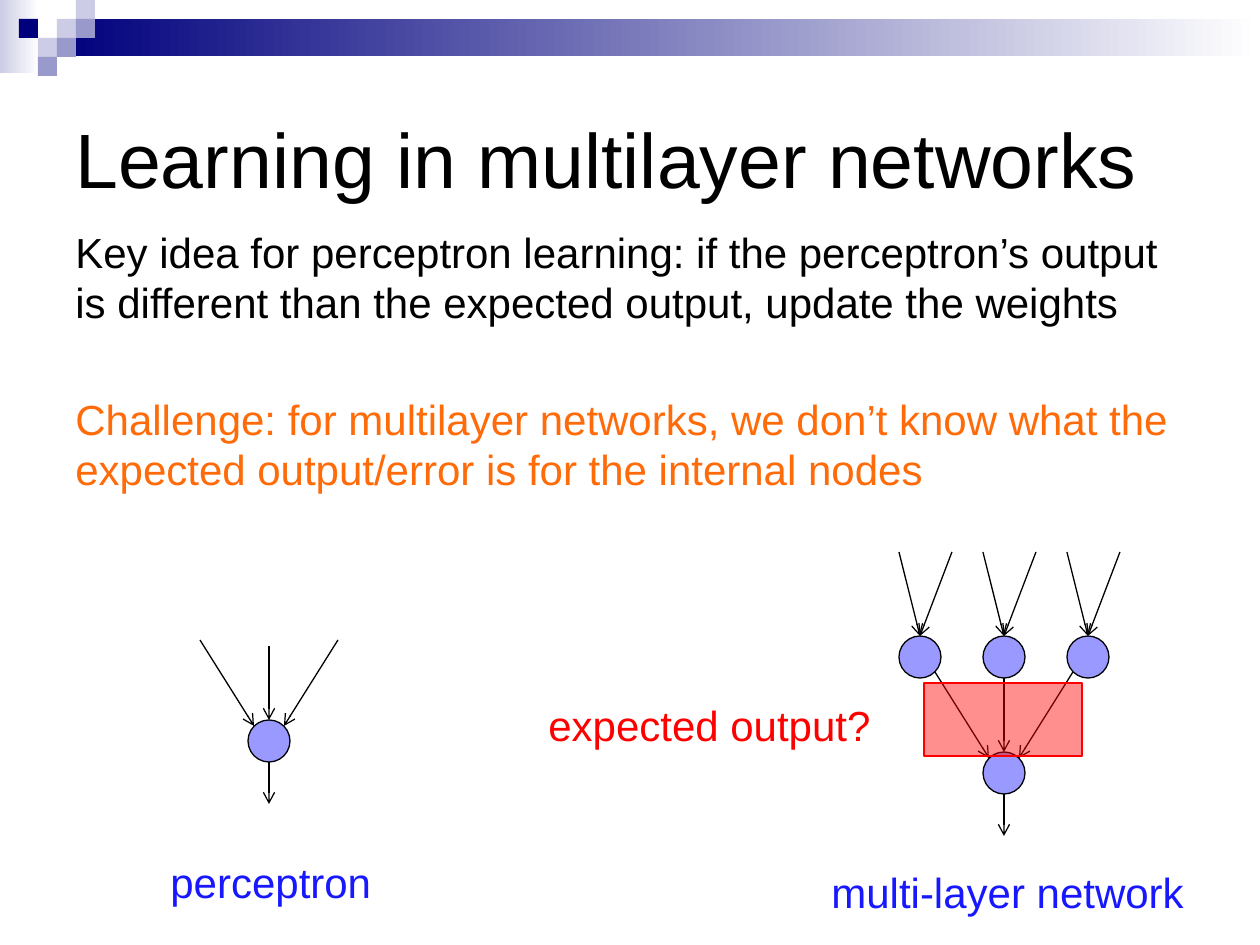
import lxml.etree
import pptx
import pptx.dml.color
import pptx.enum.shapes
import pptx.enum.text
import pptx.oxml.ns
import pptx.util

SCALE = 914400 // 126  # EMU per pixel
SHAPES = pptx.enum.shapes.MSO_SHAPE
ANCHORS = pptx.enum.text.MSO_ANCHOR

THEME = {
    "font": "Arial", "title_size": 44, "text_size": 24, "line_width": 0.75,
    "black": "000000", "white": "FFFFFF", "navy": "00007D", "pale": "CCCCE6",
    "lilac": "9999CC", "node": "9999FF", "orange": "FF6B09",
    "blue": "1818FF", "red": "FF0000",
}

# Content: box (left, top, width, height), anchor, size, paragraphs (text, color, space before)
TEXTS = [
    ((63, 63, 1134, 189), ANCHORS.MIDDLE, "title_size",
     [("Learning in multilayer networks", "black", 0)]),
    ((63, 220, 1134, 294), ANCHORS.TOP, "text_size",
     [("Key idea for perceptron learning: if the perceptron’s output is different "
       "than the expected output, update the weights", "black", 5),
      ("Challenge: for multilayer networks, we don’t know what the expected "
       "output/error is for the internal nodes", "orange", 38)]),
    ((158, 850, 284, 63), ANCHORS.TOP, "text_size", [("perceptron", "blue", 0)]),
    ((819, 860, 441, 63), ANCHORS.TOP, "text_size", [("multi-layer network", "blue", 0)]),
    ((536, 693, 378, 63), ANCHORS.TOP, "text_size", [("expected output?", "red", 0)]),
]

# Header: gradient bands, then squares as (column, row, color) on a 19 pixel grid
BANDS = [((0, 0, 39, 73), "pale"), ((57, 19, 1203, 37), "navy")]
SQUARE = 19
SQUARES = [(3, 1, "pale"), (4, 0, "pale"), (4, 1, "lilac"), (2, 2, "pale"),
           (1, 1, "navy"), (3, 2, "lilac"), (2, 3, "lilac")]

# Node centers, and arrows as (start, end) offsets from a center
NODE_SIZE = 42
HIDDEN_NODES = [(920 + 84 * index, 657) for index in range(3)]
OUTPUT_NODES = [(1004, 773), (269, 741)]
HIDDEN_ARROWS = [((-21, -105), (0, -21)), ((32, -105), (0, -21))]
OUTPUT_ARROWS = [((-69, -101), (-15, -15)), ((0, -95), (0, -21)),
                 ((69, -101), (15, -15)), ((0, 21), (0, 63))]
UNKNOWN_AREA = (924, 683, 158, 73)
UNKNOWN_ALPHA = 44


def emu(*pixels):
    return [pptx.util.Emu(value * SCALE) for value in pixels]


def color(name):
    return pptx.dml.color.RGBColor.from_string(THEME[name])


def add_filled(kind, box, fill, line=None):
    shape = slide.shapes.add_shape(kind, *emu(*box))
    shape.shadow.inherit = False
    shape.fill.solid()
    shape.fill.fore_color.rgb = color(fill)
    if line:
        shape.line.color.rgb = color(line)
        shape.line.width = pptx.util.Pt(THEME["line_width"])
    else:
        shape.line.fill.background()
    return shape


def add_band(box, start):
    fill = add_filled(SHAPES.RECTANGLE, box, start).fill
    fill.gradient()
    fill.gradient_angle = 0
    for stop, name in zip(fill.gradient_stops, (start, "white")):
        stop.color.rgb = color(name)


def add_text(box, anchor, size, paragraphs):
    frame = slide.shapes.add_textbox(*emu(*box)).text_frame
    frame.word_wrap = True
    frame.vertical_anchor = anchor
    for index, (text, name, space) in enumerate(paragraphs):
        paragraph = frame.add_paragraph() if index else frame.paragraphs[0]
        paragraph.text = text
        paragraph.space_before = pptx.util.Pt(space)
        paragraph.font.name = THEME["font"]
        paragraph.font.size = pptx.util.Pt(THEME[size])
        paragraph.font.color.rgb = color(name)


def add_arrow(center, start, end):
    ends = [base + offset for point in (start, end) for base, offset in zip(center, point)]
    arrow = slide.shapes.add_connector(pptx.enum.shapes.MSO_CONNECTOR.STRAIGHT, *emu(*ends))
    arrow.line.color.rgb = color("black")
    arrow.line.width = pptx.util.Pt(THEME["line_width"])
    lxml.etree.SubElement(arrow.line._get_or_add_ln(), pptx.oxml.ns.qn("a:tailEnd"), type="arrow")
    lxml.etree.SubElement(arrow._element.spPr, pptx.oxml.ns.qn("a:effectLst"))


presentation = pptx.Presentation()
presentation.slide_width, presentation.slide_height = emu(1260, 945)
slide = presentation.slides.add_slide(presentation.slide_layouts[6])

# Header decoration
for box, start in BANDS:
    add_band(box, start)
for column, row, name in SQUARES:
    add_filled(SHAPES.RECTANGLE, (column * SQUARE, row * SQUARE, SQUARE, SQUARE), name)

# Networks
for centers, arrows in ((HIDDEN_NODES, HIDDEN_ARROWS), (OUTPUT_NODES, OUTPUT_ARROWS)):
    for x, y in centers:
        corner = (x - NODE_SIZE // 2, y - NODE_SIZE // 2)
        add_filled(SHAPES.OVAL, (*corner, NODE_SIZE, NODE_SIZE), "node", "black")
        for start, end in arrows:
            add_arrow((x, y), start, end)

# Title, body and labels
for text in TEXTS:
    add_text(*text)

# Translucent area over the unknown outputs
area = add_filled(SHAPES.RECTANGLE, UNKNOWN_AREA, "red", "red")
area_color = area._element.spPr.find(pptx.oxml.ns.qn("a:solidFill"))[0]
lxml.etree.SubElement(area_color, pptx.oxml.ns.qn("a:alpha"), val=str(UNKNOWN_ALPHA * 1000))

presentation.save("out.pptx")
